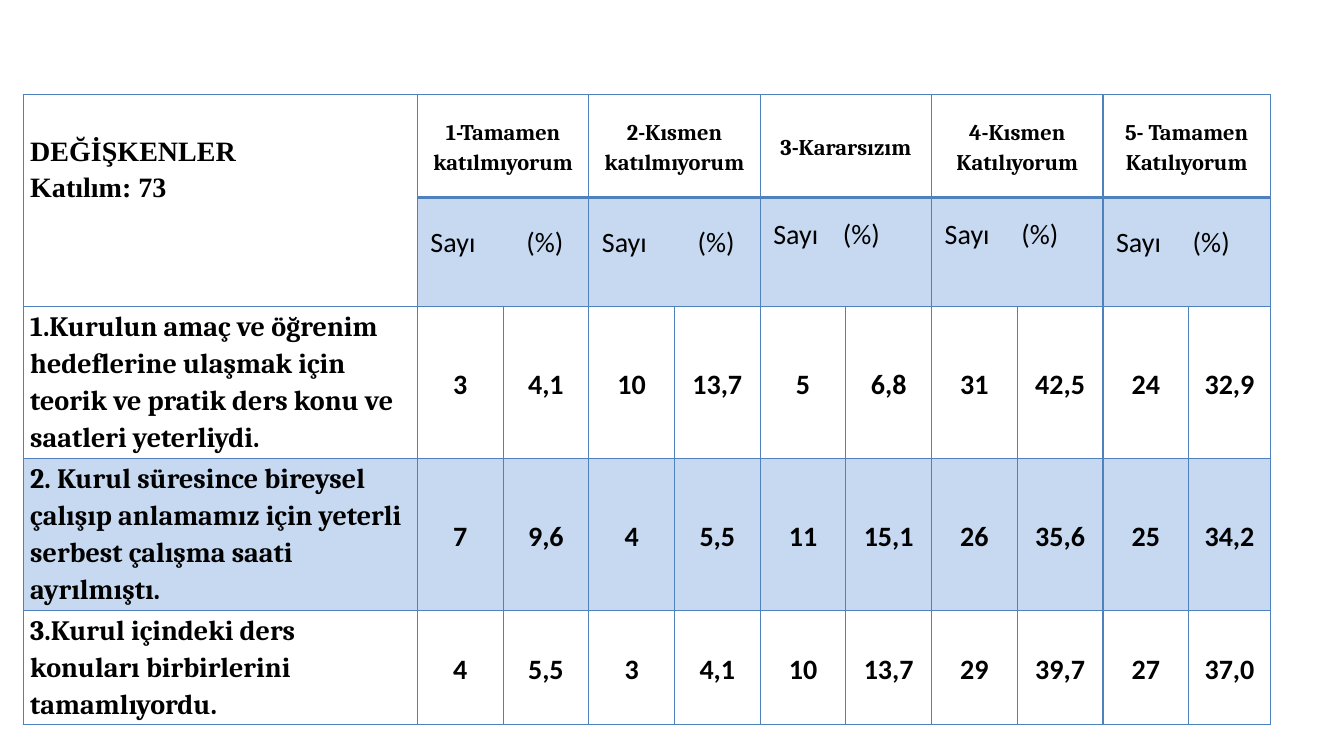
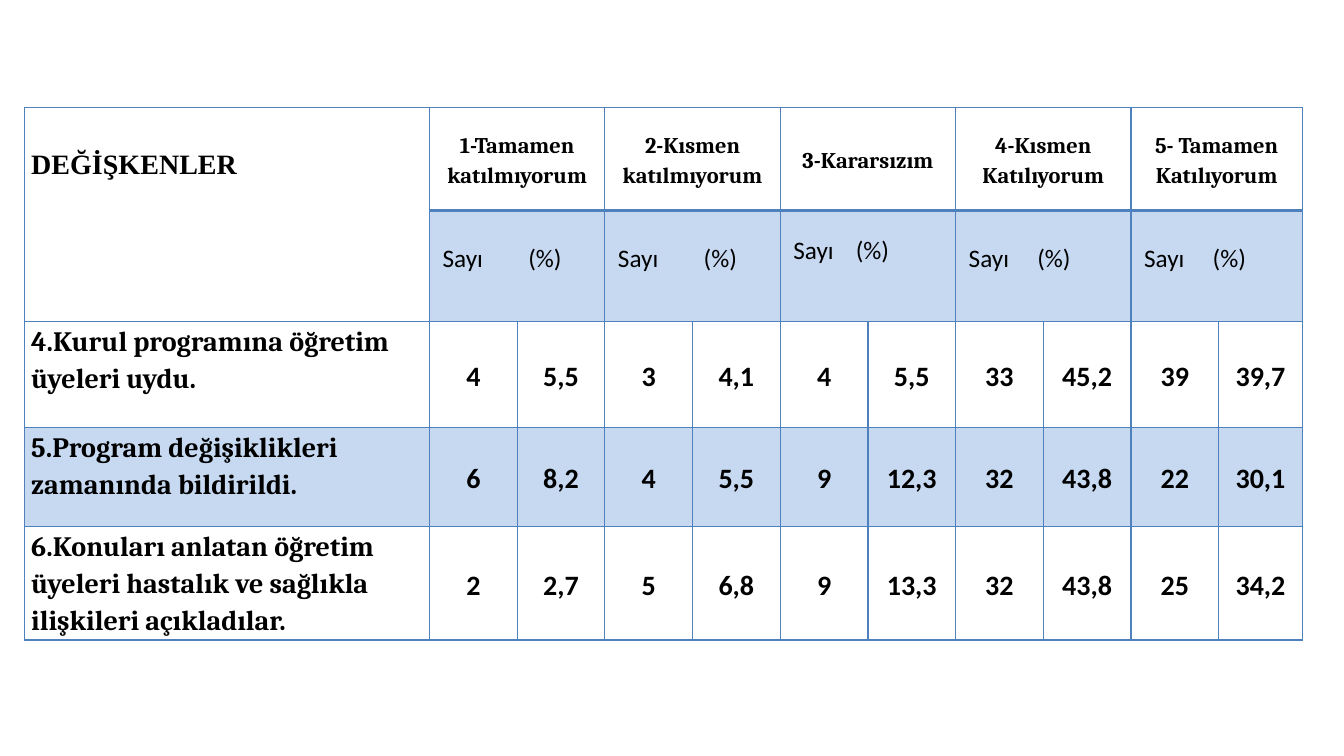
from lxml import etree
from pptx import Presentation
from pptx.dml.color import RGBColor
from pptx.enum.text import MSO_ANCHOR, PP_ALIGN
from pptx.oxml.ns import qn
from pptx.util import Inches, Pt

LEFT, CENTER = PP_ALIGN.LEFT, PP_ALIGN.CENTER
TOP, MIDDLE = MSO_ANCHOR.TOP, MSO_ANCHOR.MIDDLE
COLORS = {"text": "000000", "line": "4F81BD", "band": "C6D9F1", "plain": "FFFFFF"}
BLANK = 6
THIN, THICK = 1, 2.25
SIDE = 0.07
INDENT = 0.13
DROP = 0.37
LIFT = 0.17
HEADS = [
    "1-Tamamen katılmıyorum",
    "2-Kısmen katılmıyorum",
    "3-Kararsızım",
    "4-Kısmen Katılıyorum",
    "5- Tamamen Katılıyorum",
]
SLIDES = [
    {
        "left": 0.23, "top": 0.94,
        "cols": [3.91] + [0.85] * 9 + [0.81],
        "rows": [1.02, 1.06, 1.51, 1.51, 1.13],
        "title": ["DEĞİŞKENLER", "Katılım: 73"],
        "size": 20,
        "tabs": [0.95, 0.95, 0.69, 0.76, 0.76],
        "raised": [2, 3],
        "items": [
            ("1.Kurulun amaç ve öğrenim hedeflerine ulaşmak için teorik ve pratik "
             "ders konu ve saatleri yeterliydi.",
             "3 4,1 10 13,7 5 6,8 31 42,5 24 32,9"),
            ("2. Kurul süresince bireysel çalışıp anlamamız için yeterli serbest "
             "çalışma saati ayrılmıştı.",
             "7 9,6 4 5,5 11 15,1 26 35,6 25 34,2"),
            ("3.Kurul içindeki ders konuları birbirlerini tamamlıyordu.",
             "4 5,5 3 4,1 10 13,7 29 39,7 27 37,0"),
        ],
    },
    {
        "left": 0.24, "top": 1.07,
        "cols": [4.02] + [0.87] * 9 + [0.83],
        "rows": [1.02, 1.1, 1.05, 0.98, 1.13],
        "title": ["DEĞİŞKENLER"],
        "size": 18,
        "tabs": [0.85, 0.85, 0.62, 0.68, 0.68],
        "raised": [2],
        "items": [
            ("4.Kurul programına öğretim üyeleri uydu.",
             "4 5,5 3 4,1 4 5,5 33 45,2 39 39,7"),
            ("5.Program değişiklikleri zamanında bildirildi.",
             "6 8,2 4 5,5 9 12,3 32 43,8 22 30,1"),
            ("6.Konuları anlatan öğretim üyeleri hastalık ve sağlıkla ilişkileri "
             "açıkladılar.",
             "2 2,7 5 6,8 9 13,3 32 43,8 25 34,2"),
        ],
    },
]


def rgb(name):
    """Return a named colour."""
    return RGBColor.from_string(COLORS[name])


def add_tab(para, pos):
    """Add one left tab stop to a paragraph."""
    stops = etree.SubElement(para._p.get_or_add_pPr(), qn("a:tabLst"))
    etree.SubElement(stops, qn("a:tab"), pos=str(Inches(pos)), algn="l")


def write(cell, lines, font="Cambria", size=20, bold=True, align=LEFT,
          anchor=TOP, space=1.15, left=SIDE, top=0, bottom=0, tab=None):
    """Fill a cell with formatted paragraphs."""
    cell.margin_left, cell.margin_right = Inches(left), Inches(SIDE)
    cell.margin_top, cell.margin_bottom = Inches(top), Inches(bottom)
    cell.vertical_anchor = anchor
    frame = cell.text_frame
    for i, line in enumerate(lines):
        para = frame.add_paragraph() if i else frame.paragraphs[0]
        para.alignment, para.line_spacing = align, space
        if tab:
            add_tab(para, tab)
        run = para.add_run()
        run.text = line
        run.font.name, run.font.size, run.font.bold = font, Pt(size), bold
        run.font.color.rgb = rgb("text")


def paint(cell, fill, top=THIN, bottom=THIN):
    """Set the borders and fill of a cell."""
    props = cell._tc.get_or_add_tcPr()
    widths = {"a:lnL": THIN, "a:lnR": THIN, "a:lnT": top, "a:lnB": bottom}
    for tag, width in widths.items():
        edge = etree.SubElement(props, qn(tag), w=str(Pt(width)))
        solid = etree.SubElement(edge, qn("a:solidFill"))
        etree.SubElement(solid, qn("a:srgbClr"), val=COLORS["line"])
    cell.fill.solid()
    cell.fill.fore_color.rgb = rgb(fill)


def add_grid(slide, data):
    """Add an empty table with sized columns and rows."""
    cols, rows = data["cols"], data["rows"]
    frame = slide.shapes.add_table(
        len(rows), len(cols), Inches(data["left"]), Inches(data["top"]),
        Inches(sum(cols)), Inches(sum(rows)))
    grid = frame.table
    grid.first_row = grid.horz_banding = False
    for col, width in zip(grid.columns, cols):
        col.width = Inches(width)
    for row, height in zip(grid.rows, rows):
        row.height = Inches(height)
    for r in range(len(rows)):
        for c in range(len(cols)):
            paint(grid.cell(r, c), "band" if r % 2 and (r > 1 or c) else "plain",
                  top=THICK if r == 1 and c else THIN,
                  bottom=THICK if r == 0 and c else THIN)
    return grid


def add_heads(grid, data):
    """Fill the two heading rows."""
    grid.cell(0, 0).merge(grid.cell(1, 0))
    write(grid.cell(0, 0), data["title"], font="Times New Roman", top=DROP)
    for i, (head, tab) in enumerate(zip(HEADS, data["tabs"])):
        col = 1 + 2 * i
        for row in range(2):
            grid.cell(row, col).merge(grid.cell(row, col + 1))
        write(grid.cell(0, col), [head], size=16, align=CENTER, anchor=MIDDLE)
        write(grid.cell(1, col), ["Sayı\t(%)"], font="Calibri", size=data["size"],
              bold=False, anchor=MIDDLE, space=Pt(12), left=INDENT, tab=tab,
              bottom=LIFT if i in data["raised"] else 0)


def add_items(grid, items):
    """Fill the rows of survey answers."""
    for row, (text, values) in enumerate(items, 2):
        write(grid.cell(row, 0), [text])
        for col, value in enumerate(values.split(), 1):
            write(grid.cell(row, col), [value], font="Calibri", align=CENTER,
                  anchor=MIDDLE)


def main():
    """Build and save the survey slides."""
    deck = Presentation()
    deck.slide_width, deck.slide_height = Inches(13.33), Inches(7.5)
    for data in SLIDES:
        slide = deck.slides.add_slide(deck.slide_layouts[BLANK])
        grid = add_grid(slide, data)
        add_heads(grid, data)
        add_items(grid, data["items"])
    deck.save("out.pptx")


if __name__ == "__main__":
    main()
